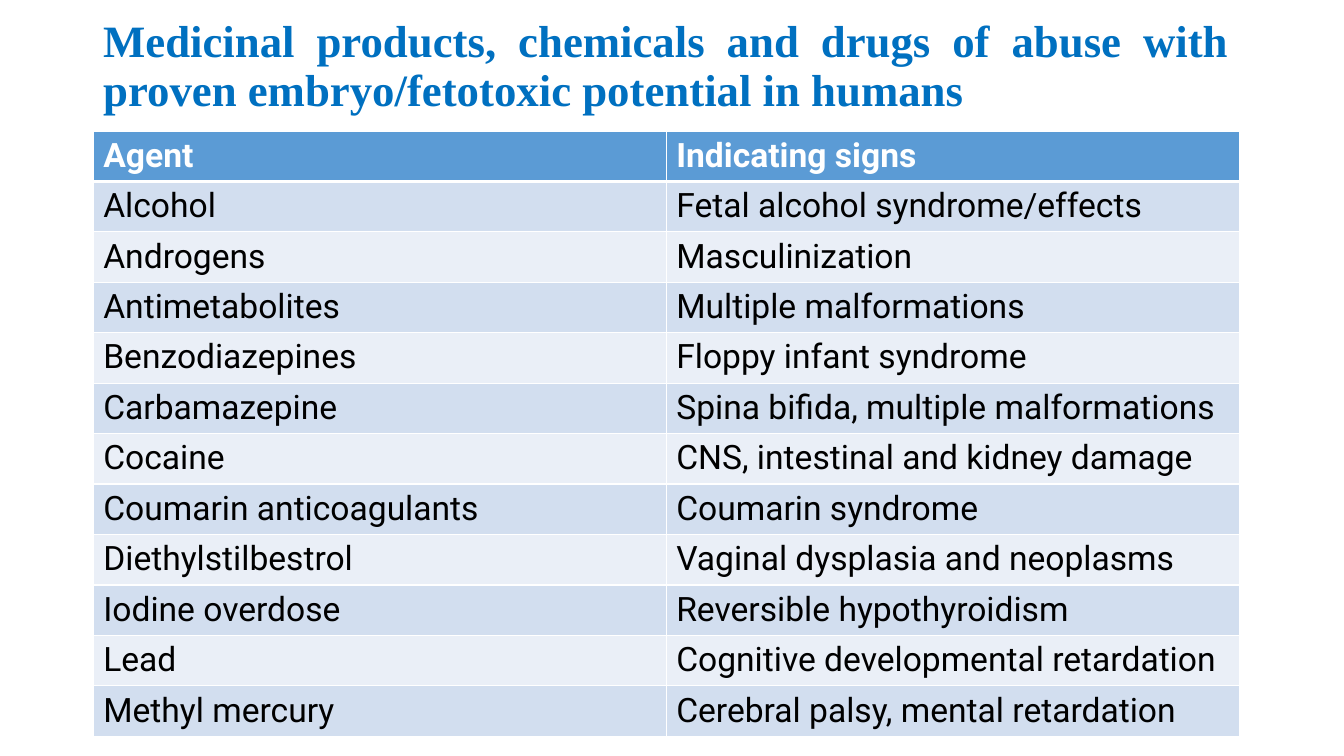
from pptx import Presentation
from pptx.util import Cm, Pt
from pptx.dml.color import RGBColor as Rgb
from pptx.enum.text import MSO_ANCHOR as Anchor, PP_ALIGN as Align
from pptx.oxml import parse_xml
from pptx.oxml.ns import nsdecls

theme = {
    "title": {"name": "Times New Roman", "size": Pt(32), "bold": True, "color": "0070C0"},
    "head": {"name": "Roboto", "size": Pt(24), "bold": True, "color": "FFFFFF"},
    "body": {"name": "Roboto", "size": Pt(24), "bold": False, "color": "000000"},
    "top": "5B9BD5",
    "bands": ["EAEFF7", "D2DEEF"],
    "rule": "FFFFFF",
}

agents = [
    ("Agent", "Indicating signs"),
    ("Alcohol", "Fetal alcohol syndrome/effects"),
    ("Androgens", "Masculinization"),
    ("Antimetabolites", "Multiple malformations"),
    ("Benzodiazepines", "Floppy infant syndrome"),
    ("Carbamazepine", "Spina bifida, multiple malformations"),
    ("Cocaine", "CNS, intestinal and kidney damage"),
    ("Coumarin anticoagulants", "Coumarin syndrome"),
    ("Diethylstilbestrol", "Vaginal dysplasia and neoplasms"),
    ("Iodine overdose", "Reversible hypothyroidism"),
    ("Lead", "Cognitive developmental retardation"),
    ("Methyl mercury", "Cerebral palsy, mental retardation"),
]


def write(para, text, style):
    run = para.add_run()
    run.text = text
    for key, val in theme[style].items():
        if key == "color":
            run.font.color.rgb = Rgb.from_string(val)
        else:
            setattr(run.font, key, val)


def edge(cell, side, width):
    cell._tc.get_or_add_tcPr().append(parse_xml(
        f'<a:ln{side} {nsdecls("a")} w="{Pt(width)}"><a:solidFill>'
        f'<a:srgbClr val="{theme["rule"]}"/></a:solidFill></a:ln{side}>'))


deck = Presentation()
deck.slide_width, deck.slide_height = Cm(33.87), Cm(19.05)
slide = deck.slides.add_slide(deck.slide_layouts[6])

left, width = Cm(2.35), Cm(28.88)
title = slide.shapes.add_textbox(left, Cm(0.61), width, Cm(2.18)).text_frame
title.word_wrap = True
title.vertical_anchor = Anchor.MIDDLE
para = title.paragraphs[0]
para.alignment = Align.JUSTIFY
para.line_spacing = 0.9
write(para, "Medicinal products, chemicals and drugs of abuse with "
      "proven embryo/fetotoxic potential in humans", "title")

high = Cm(1.25)
table = slide.shapes.add_table(
    len(agents), 2, left, Cm(3.3), width, high * len(agents)).table
for r, pair in enumerate(agents):
    table.rows[r].height = high
    for c, text in enumerate(pair):
        cell = table.cell(r, c)
        for side in "LRTB":
            thick = (r == 0 and side == "B") or (r == 1 and side == "T")
            edge(cell, side, 3 if thick else 1)
        cell.fill.solid()
        tint = theme["bands"][r % 2] if r else theme["top"]
        cell.fill.fore_color.rgb = Rgb.from_string(tint)
        write(cell.text_frame.paragraphs[0], text, "body" if r else "head")

deck.save("out.pptx")
